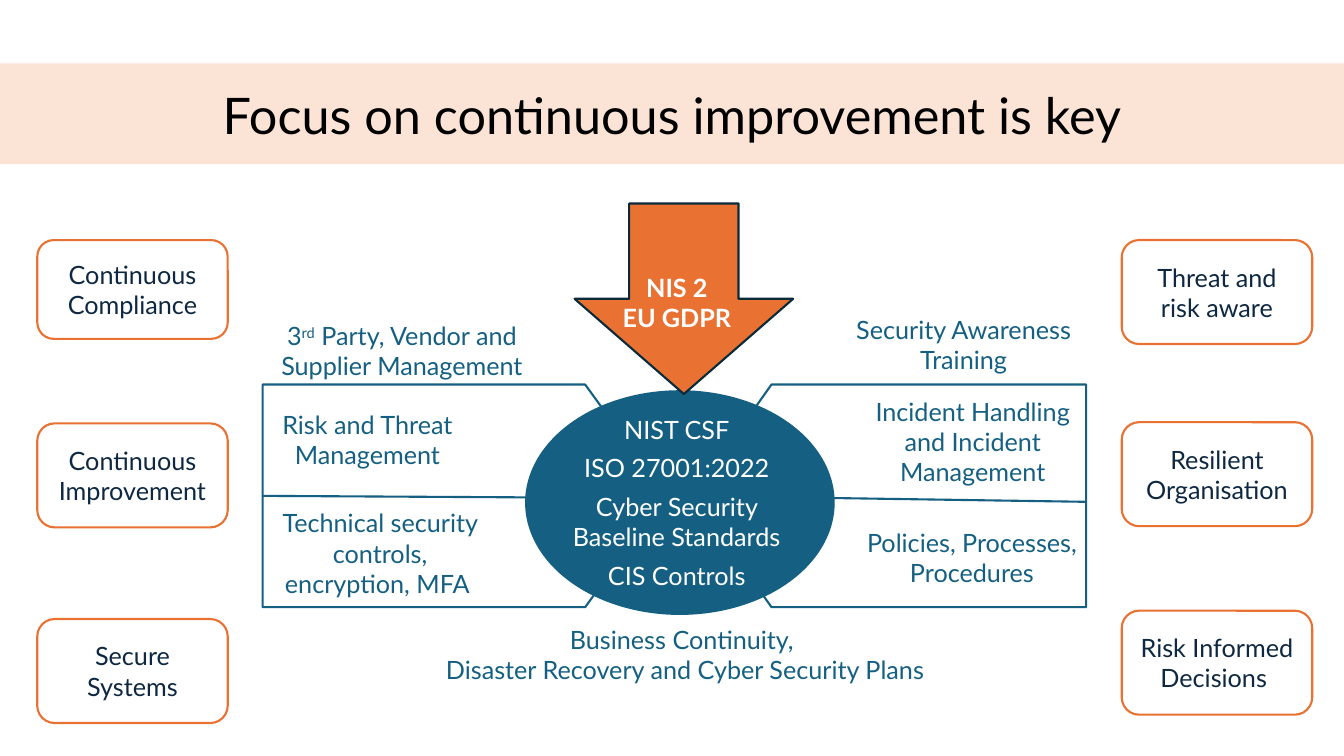
from pptx import Presentation
from pptx.dml.color import RGBColor
from pptx.enum.shapes import MSO_CONNECTOR, MSO_SHAPE
from pptx.enum.text import MSO_ANCHOR, MSO_AUTO_SIZE, PP_ALIGN
from pptx.oxml.ns import qn
from pptx.util import Cm, Pt
from lxml.etree import SubElement

TEAL, ORANGE, PEACH = "156082", "E97132", "FBE3D6"
NAVY, DARK, WHITE, BLACK = "0E2841", "092A39", "FFFFFF", "000000"


def color(value):
    return RGBColor.from_string(value)


def write(tf, paragraphs, text_color, gap=0, **extra):
    """Fill a text frame; a paragraph is a string or a list of (text, baseline)."""
    tf.word_wrap = True
    style = {"name": "Lato", "size": Pt(18)} | extra
    for i, content in enumerate(paragraphs):
        p = tf.paragraphs[0] if i == 0 else tf.add_paragraph()
        p.alignment = PP_ALIGN.CENTER
        if i and gap:
            p.space_before = Pt(gap)
        parts = [(content, 0)] if isinstance(content, str) else content
        for text, baseline in parts:
            r = p.add_run()
            r.text = text
            for key, value in style.items():
                setattr(r.font, key, value)
            r.font.color.rgb = color(text_color)
            if baseline:
                r._r.get_or_add_rPr().set("baseline", str(baseline))


def add_shape(s, kind, x, y, w, h, fill=None, line=None):
    sp = s.shapes.add_shape(kind, Cm(x), Cm(y), Cm(w), Cm(h))
    sp.shadow.inherit = False
    if fill:
        sp.fill.solid()
        sp.fill.fore_color.rgb = color(fill)
    else:
        sp.fill.background()
    if line:
        sp.line.color.rgb = color(line)
        sp.line.width = Pt(1.5)
    else:
        sp.line.fill.background()
    return sp


def add_label(s, x, y, w, h, paragraphs, text_color=TEAL, **style):
    tf = s.shapes.add_textbox(Cm(x), Cm(y), Cm(w), Cm(h)).text_frame
    tf.auto_size = MSO_AUTO_SIZE.SHAPE_TO_FIT_TEXT
    write(tf, paragraphs, text_color, **style)


def add_line(s, x1, y1, x2, y2):
    c = s.shapes.add_connector(MSO_CONNECTOR.STRAIGHT, Cm(x1), Cm(y1), Cm(x2), Cm(y2))
    c.line.color.rgb = color(TEAL)
    c.line.width = Pt(1.5)
    SubElement(c._element.spPr, qn("a:effectLst"))


def title_band(s, x, y, w, h):
    sp = add_shape(s, MSO_SHAPE.RECTANGLE, x, y, w, h, PEACH)
    sp.text_frame.vertical_anchor = MSO_ANCHOR.MIDDLE
    write(sp.text_frame, ["Focus on continuous improvement is key"], BLACK, size=Pt(36))


def outcome_column(s, x, y, w, outcomes):
    """Rounded boxes given as (offset from the column top, height, text)."""
    for dy, h, text in outcomes:
        sp = add_shape(s, MSO_SHAPE.ROUNDED_RECTANGLE, x, y + dy, w, h, WHITE, ORANGE)
        sp.text_frame.vertical_anchor = MSO_ANCHOR.MIDDLE
        write(sp.text_frame, [text], NAVY)


def control_wing(s, x, y, w, h, rotation, divider, labels):
    """Pentagon pointing at the core, split by a divider, with labels."""
    # The shape is turned a quarter, so its sides swap about the same centre
    sp = add_shape(s, MSO_SHAPE.FLOWCHART_OFFPAGE_CONNECTOR,
                   x + (w - h) / 2, y + (h - w) / 2, h, w, line=TEAL)
    sp.rotation = rotation
    x1, dy1, x2, dy2 = divider
    middle = y + h / 2
    add_line(s, x + x1, middle + dy1, x + x2, middle + dy2)
    for dx, dy, lw, lh, content in labels:
        add_label(s, x + dx, y + dy, lw, lh, [content])


def core(s, x, y, w, h):
    """Ellipse of standards with the plans below it."""
    add_shape(s, MSO_SHAPE.FLOWCHART_CONNECTOR, x, y, w, h, TEAL, TEAL)
    standards = ["NIST CSF", "ISO 27001:2022",
                 "Cyber Security Baseline Standards", "CIS Controls"]
    add_label(s, x + 0.43, y + 0.45, 6.73, 4.75, standards, WHITE, gap=6)
    plans = ["Business Continuity, ", "Disaster Recovery and Cyber Security Plans"]
    add_label(s, x - 3.63, y + h + 0.13, 15.27, 1.8, plans)


def regulation_arrow(s, x, y, w, h):
    add_shape(s, MSO_SHAPE.DOWN_ARROW, x, y, w, h, ORANGE, DARK)
    add_label(s, x - 0.56, y + 1.6, 6.43, 1.8, ["NIS 2 ", "EU GDPR "], WHITE, bold=True)


def main():
    prs = Presentation()
    prs.slide_width, prs.slide_height = Cm(33.87), Cm(19.05)
    s = prs.slides.add_slide(prs.slide_layouts[6])

    # Controls on both sides of the core
    supplier = [("3", 0), ("rd", 30000), (" Party, Vendor and Supplier Management", 0)]
    control_wing(s, 6.62, 9.69, 10.16, 5.61, 270, (0, 0, 8.76, 0.05), [
        (0.03, -1.74, 6.96, 1.8, supplier),
        (-0.55, 0.5, 6.38, 2.57, "Risk and Threat Management"),
        (0.09, 2.98, 5.74, 2.54, "Technical security controls, encryption, MFA "),
    ])
    control_wing(s, 17.46, 9.69, 9.91, 5.61, 90, (3.22, 0.05, 9.91, 0.15), [
        (3.22, -1.89, 7.21, 1.8, "Security Awareness Training"),
        (3.88, 0.17, 6.35, 2.57, "Incident Handling and Incident Management"),
        (3.95, 3.47, 6.17, 2.57, "Policies, Processes, Procedures"),
    ])
    core(s, 13.26, 9.86, 7.75, 5.61)
    regulation_arrow(s, 14.48, 5.13, 5.51, 4.8)

    title_band(s, 0, 1.6, 33.87, 2.54)

    # Outcomes at the outer edges
    outcome_column(s, 0.94, 6.05, 4.8, [
        (0, 2.49, "Continuous Compliance"),
        (4.62, 2.62, "Continuous Improvement"),
        (9.55, 2.62, "Secure Systems"),
    ])
    outcome_column(s, 28.27, 6.05, 4.8, [
        (0, 2.62, "Threat and risk aware"),
        (4.59, 2.62, "Resilient Organisation"),
        (9.34, 2.62, "Risk Informed Decisions "),
    ])
    prs.save("out.pptx")


if __name__ == "__main__":
    main()
